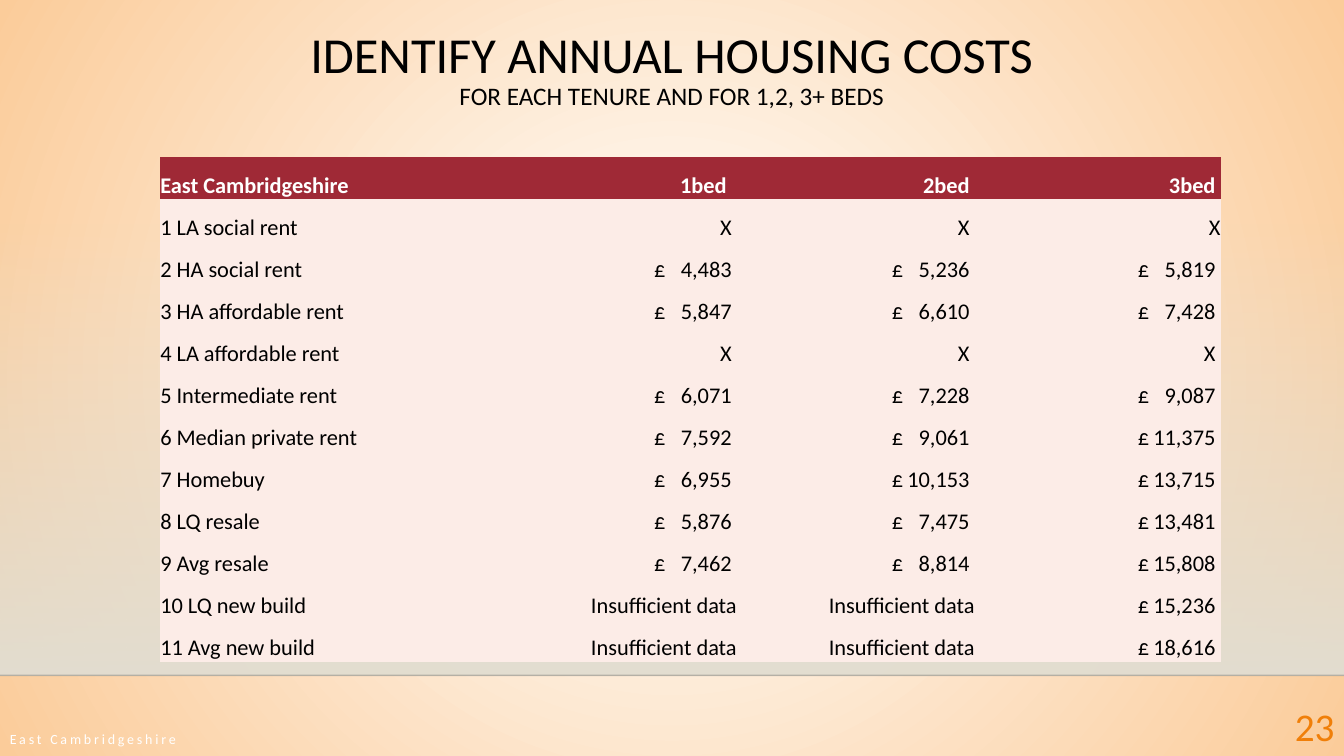
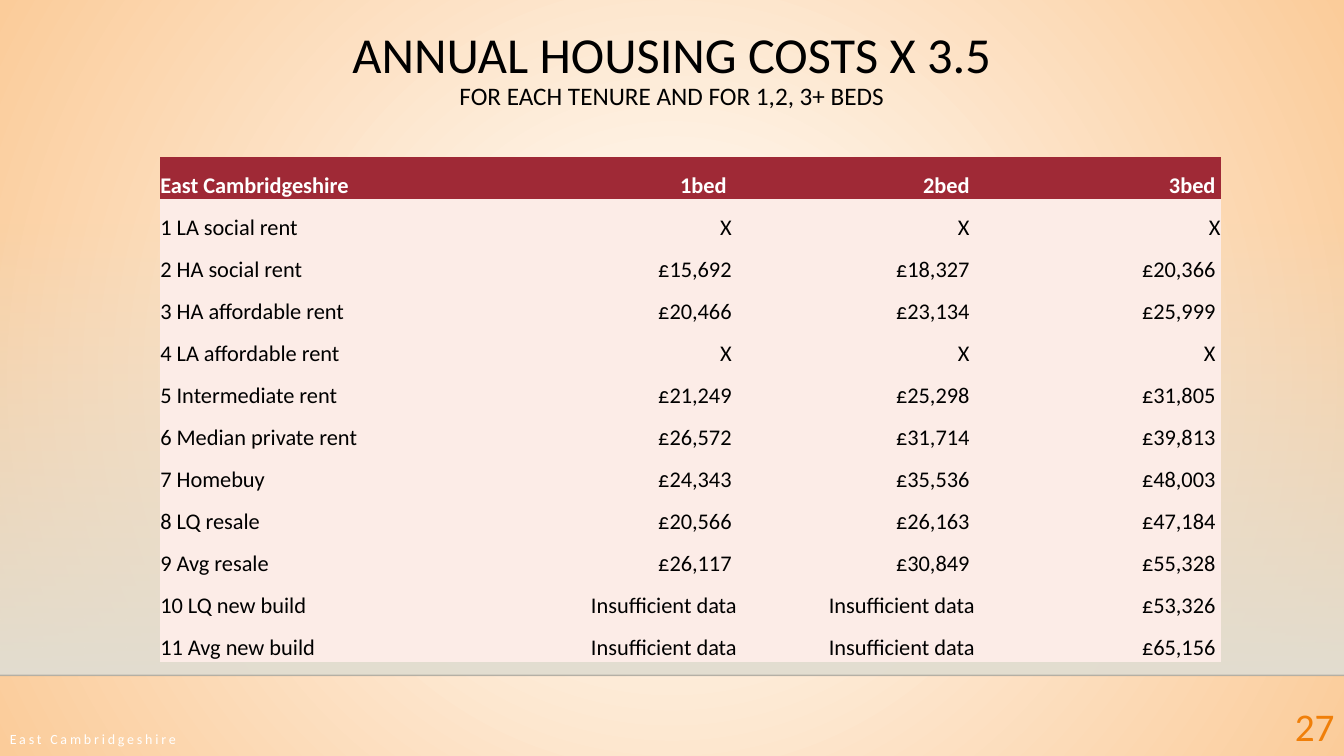
from dataclasses import dataclass
from typing import Any

from lxml import etree
from pptx import Presentation
from pptx import util as u
from pptx.dml.color import RGBColor
from pptx.enum import shapes, text
from pptx.oxml import ns

WIDE, HIGH = 960, 540
FONT = "Calibri"
BLACK, WHITE, ORANGE = "000000", "FFFFFF", "F07F09"
PEACH, SAND, RED, PINK = "FBCC9A", "E3DED1", "9F2936", "FCECE7"
AREA = "East Cambridgeshire"
NOTE = "FOR EACH TENURE AND FOR 1,2, 3+ BEDS"
PLAIN = "{2D5ABB26-0587-4C30-8999-92F81FD0307C}"
LEFT, RIGHT = text.PP_ALIGN.LEFT, text.PP_ALIGN.RIGHT
COLS = (238.3, 173.5, 169.9, 175.7)
ROW = 30.05
SUM, SPACE = 59, 3.6
TENURES = (
    "1 LA social rent", "2 HA social rent", "3 HA affordable rent",
    "4 LA affordable rent", "5 Intermediate rent", "6 Median private rent",
    "7 Homebuy", "8 LQ resale", "9 Avg resale", "10 LQ new build",
    "11 Avg new build",
)
NONE = ("X ", "X ", "X ")
FIRST = ("X ", "X ", "X")
LACK = "Insufficient data"


@dataclass(frozen=True)
class Page:
    title: str
    number: int
    split: bool
    costs: tuple[tuple[int | str, ...], ...]


@dataclass(frozen=True)
class Box:
    left: float
    top: float
    width: float
    height: float

    def place(self) -> tuple[u.Length, ...]:
        return tuple(u.Pt(n) for n in (self.left, self.top, self.width, self.height))


TITLE = Box(50.4, 10, 859, 80.6)
FOOT = Box(0, 515.5, 391.7, 24.5)
COUNT = Box(896.4, 498.2, 64, 39.6)
BAND = Box(0, 159.1, WIDE, 323.3)
GRID = Box(114.5, 112.3, sum(COLS), 12 * ROW)

PAGES = (
    Page("IDENTIFY ANNUAL HOUSING COSTS", 23, True, (
        FIRST,
        (4483, 5236, 5819),
        (5847, 6610, 7428),
        NONE,
        (6071, 7228, 9087),
        (7592, 9061, 11375),
        (6955, 10153, 13715),
        (5876, 7475, 13481),
        (7462, 8814, 15808),
        (LACK, LACK, 15236),
        (LACK, LACK, 18616),
    )),
    Page("ANNUAL HOUSING COSTS X 3.5", 27, False, (
        FIRST,
        (15692, 18327, 20366),
        (20466, 23134, 25999),
        NONE,
        (21249, 25298, 31805),
        (26572, 31714, 39813),
        (24343, 35536, 48003),
        (20566, 26163, 47184),
        (26117, 30849, 55328),
        (LACK, LACK, 53326),
        (LACK, LACK, 65156),
    )),
)


def tint(code: str) -> RGBColor:
    return RGBColor.from_string(code)


def style(font: Any, size: float, code: str, bold: bool = False) -> None:
    font.name, font.size, font.bold = FONT, u.Pt(size), bold
    font.color.rgb = tint(code)


def fade(host: Any, start: str, end: str, clear: bool, shape: str) -> None:
    alpha = '<a:alpha val="0"/>' if clear else ""
    grad = etree.fromstring(
        f'<a:gradFill {ns.nsdecls("a")} rotWithShape="1"><a:gsLst>'
        f'<a:gs pos="0"><a:srgbClr val="{start}">{alpha}</a:srgbClr></a:gs>'
        f'<a:gs pos="100000"><a:srgbClr val="{end}"/></a:gs>'
        f"</a:gsLst>{shape}</a:gradFill>"
    )
    solid = host.find(ns.qn("a:solidFill"))
    host.replace(solid, grad)


def label(slide: Any, box: Box, words: str, size: float, code: str,
          align: text.PP_ALIGN, middle: bool = True) -> Any:
    frame = slide.shapes.add_textbox(*box.place()).text_frame
    frame.word_wrap = True
    anchor = text.MSO_ANCHOR
    frame.vertical_anchor = anchor.MIDDLE if middle else anchor.TOP
    para = frame.paragraphs[0]
    para.alignment = align
    run = para.add_run()
    run.text = words
    style(run.font, size, code)
    return para


def paint(master: Any) -> None:
    fill = master.background.fill
    fill.solid()
    fill.fore_color.rgb = tint(PEACH)
    host = next(master.element.iter(ns.qn("p:bgPr")))
    fade(host, WHITE, PEACH, False,
         '<a:path path="circle"><a:fillToRect l="50000" t="50000" '
         'r="50000" b="50000"/></a:path>')


def base(slide: Any) -> None:
    band = slide.shapes.add_shape(shapes.MSO_SHAPE.RECTANGLE, *BAND.place())
    band.shadow.inherit = False
    band.line.fill.background()
    band.fill.solid()
    band.fill.fore_color.rgb = tint(SAND)
    fade(band.element.spPr, SAND, SAND, True, '<a:lin ang="5400000" scaled="0"/>')
    edge = u.Pt(BAND.top + BAND.height)
    rule = slide.shapes.add_connector(
        shapes.MSO_CONNECTOR.STRAIGHT, 0, edge, u.Pt(WIDE), edge)
    rule.line.width = u.Pt(1)
    rule.line.color.rgb = tint("000001")
    props = rule.element.spPr
    hue = next(props.iter(ns.qn("a:srgbClr")))
    etree.SubElement(hue, ns.qn("a:alpha"), val="20000")
    etree.SubElement(props, ns.qn("a:effectLst"))


def stop(para: Any, pos: float) -> None:
    props = para._p.get_or_add_pPr()
    tabs = etree.SubElement(props, ns.qn("a:tabLst"))
    etree.SubElement(tabs, ns.qn("a:tab"), pos=str(u.Pt(pos)), algn="r")


def write(cell: Any, value: int | str, col: int, head: bool, split: bool) -> None:
    cell.fill.solid()
    cell.fill.fore_color.rgb = tint(RED if head else PINK)
    cell.margin_left = cell.margin_right = cell.margin_top = cell.margin_bottom = 0
    cell.vertical_anchor = text.MSO_ANCHOR.BOTTOM
    para = cell.text_frame.paragraphs[0]
    para.alignment = RIGHT if col else LEFT
    if isinstance(value, str):
        para.text = value
    elif split:
        cell.margin_left = u.Pt(COLS[col] - SUM)
        para.alignment = LEFT
        stop(para, SUM - SPACE)
        para.text = f"£\t{value:,}"
    else:
        para.text = f"£{value:,} "
    if head and col == 1:
        cell.margin_right = u.Pt(SPACE)
    style(para.font, 16, WHITE if head else BLACK, head)


def table(slide: Any, page: Page) -> None:
    rows = [(AREA, "1bed ", "2bed ", "3bed ")]
    rows += [(name, *costs) for name, costs in zip(TENURES, page.costs)]
    frame = slide.shapes.add_table(len(rows), len(COLS), *GRID.place())
    next(frame.element.iter(ns.qn("a:tableStyleId"))).text = PLAIN
    grid = frame.table
    grid.horz_banding = False
    for col, width in zip(grid.columns, COLS):
        col.width = u.Pt(width)
    for i, row in enumerate(rows):
        grid.rows[i].height = u.Pt(ROW)
        for j, value in enumerate(row):
            write(grid.cell(i, j), value, j, i == 0, page.split)


def build(deck: Any, page: Page) -> None:
    slide = deck.slides.add_slide(deck.slide_layouts[6])
    base(slide)
    table(slide, page)
    foot = label(slide, FOOT, AREA, 10, WHITE, LEFT)
    foot.runs[0].font._element.set("spc", "200")
    label(slide, COUNT, str(page.number), 28, ORANGE, RIGHT, False)
    title = label(slide, TITLE, page.title, 36, BLACK, text.PP_ALIGN.CENTER)
    title.line_spacing = 0.9
    title.add_line_break()
    run = title.add_run()
    run.text = NOTE
    style(run.font, 18, BLACK)


def main() -> None:
    deck = Presentation()
    deck.slide_width, deck.slide_height = u.Pt(WIDE), u.Pt(HIGH)
    paint(deck.slide_master)
    for page in PAGES:
        build(deck, page)
    deck.save("out.pptx")


if __name__ == "__main__":
    main()
